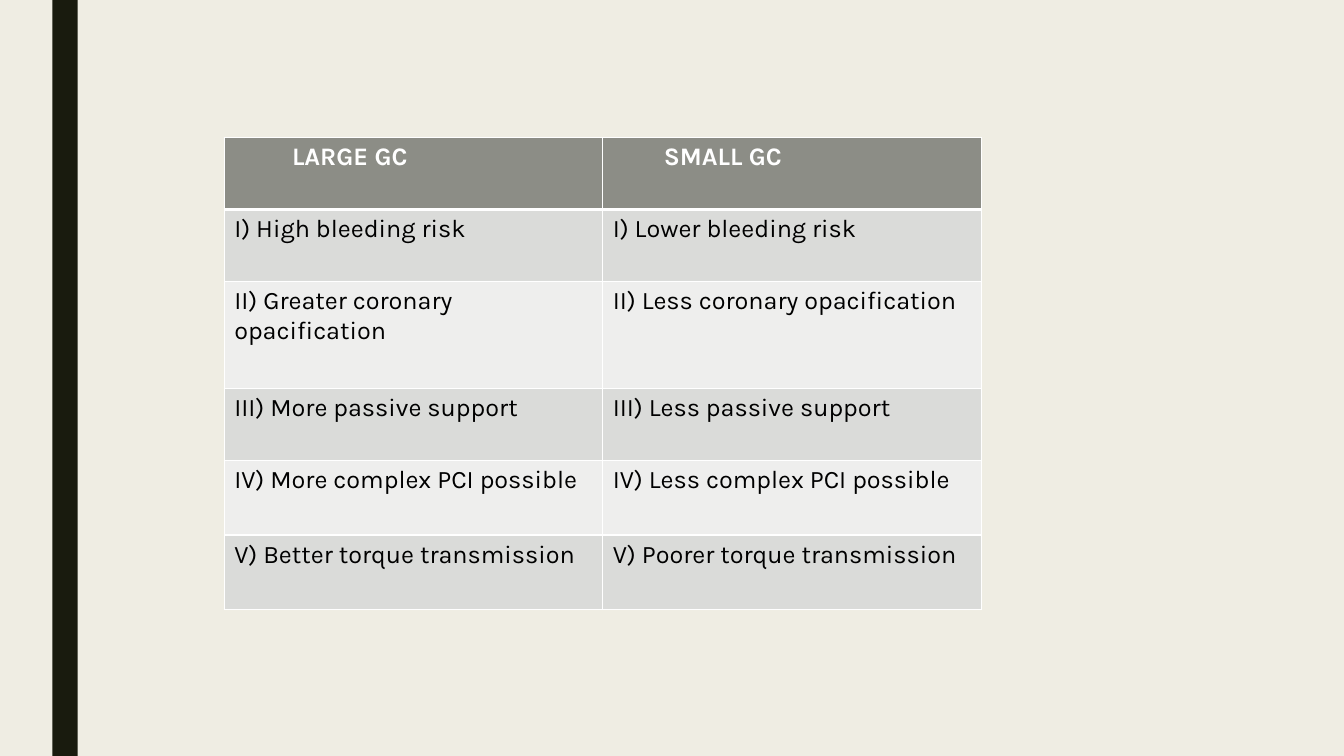
from dataclasses import dataclass

from lxml import etree
from pptx import Presentation
from pptx import util as u
from pptx.dml import color
from pptx.enum import shapes
from pptx.oxml import ns


@dataclass(frozen=True)
class Theme:
    """Colours, font and sizes."""
    back: str = "EFEDE3"
    bar: str = "191B0E"
    head: str = "8C8D86"
    bands: tuple = ("DADBD9", "EEEEED")
    light: str = "FFFFFF"
    dark: str = "000000"
    font: str = "Karla"
    size: int = 18
    thin: int = 1
    thick: int = 3


def paint(fill, tint):
    """Make a fill solid in the given colour."""
    fill.solid()
    fill.fore_color.rgb = color.RGBColor.from_string(tint)


def apply(item, values):
    """Set each attribute named in the dict."""
    for name, value in values.items():
        setattr(item, name, value)


class Maker:
    """Draws elements on the current slide in one style."""

    def __init__(self, slide, theme):
        """Keep the slide and theme, and paint the background."""
        self.slide, self.theme = slide, theme
        paint(slide.background.fill, theme.back)

    def bar(self, left, top, width, height):
        """Add a plain filled bar."""
        box = [u.Cm(n) for n in (left, top, width, height)]
        bar = self.slide.shapes.add_shape(shapes.MSO_SHAPE.RECTANGLE, *box)
        paint(bar.fill, self.theme.bar)
        bar.line.fill.background()
        bar.shadow.inherit = False

    def edge(self, cell, bottom):
        """Draw the four borders of a cell."""
        props = cell._tc.get_or_add_tcPr()
        for spot, side in enumerate("LRTB"):
            points = bottom if side == "B" else self.theme.thin
            line = etree.Element(ns.qn(f"a:ln{side}"), w=str(u.Pt(points)))
            fill = etree.SubElement(line, ns.qn("a:solidFill"))
            etree.SubElement(fill, ns.qn("a:srgbClr"), val=self.theme.light)
            props.insert(spot, line)

    def cell(self, cell, words, row, inset):
        """Fill and format one table cell."""
        style, head = self.theme, row == 0
        cell.text = words
        if head:
            cell.margin_left = u.Cm(inset)
        paint(cell.fill, style.head if head else style.bands[(row - 1) % 2])
        font = cell.text_frame.paragraphs[0].runs[0].font
        apply(font, {"name": style.font, "size": u.Pt(style.size), "bold": head})
        tint = style.light if head else style.dark
        font.color.rgb = color.RGBColor.from_string(tint)
        self.edge(cell, style.thick if head else style.thin)

    def table(self, left, top, width, heights, rows, insets):
        """Add a banded table with equal columns."""
        count = len(rows[0])
        box = [u.Cm(n) for n in (left, top, width * count, sum(heights))]
        table = self.slide.shapes.add_table(len(rows), count, *box).table
        for column in table.columns:
            column.width = u.Cm(width)
        for r, (height, words) in enumerate(zip(heights, rows)):
            table.rows[r].height = u.Cm(height)
            for c, (word, inset) in enumerate(zip(words, insets)):
                self.cell(table.cell(r, c), word, r, inset)


ROWS = [
    ("LARGE GC", "SMALL GC"),
    ("I) High bleeding risk", "I) Lower bleeding risk"),
    ("II) Greater coronary opacification", "II) Less coronary opacification"),
    ("III) More passive support", "III) Less passive support"),
    ("IV) More complex PCI possible", "IV) Less complex PCI possible"),
    ("V) Better torque transmission", "V) Poorer torque transmission"),
]


def main():
    """Build and save the slide."""
    deck = Presentation()
    apply(deck, {"slide_width": u.Cm(33.87), "slide_height": u.Cm(19.05)})
    maker = Maker(deck.slides.add_slide(deck.slide_layouts[6]), Theme())
    maker.bar(1.32, 0, 0.64, 19.05)
    heights = (1.82, 1.82, 2.68, 1.82, 1.88, 1.88)
    maker.table(5.65, 3.46, 9.54, heights, ROWS, (1.71, 1.54))
    deck.save("out.pptx")


if __name__ == "__main__":
    main()
